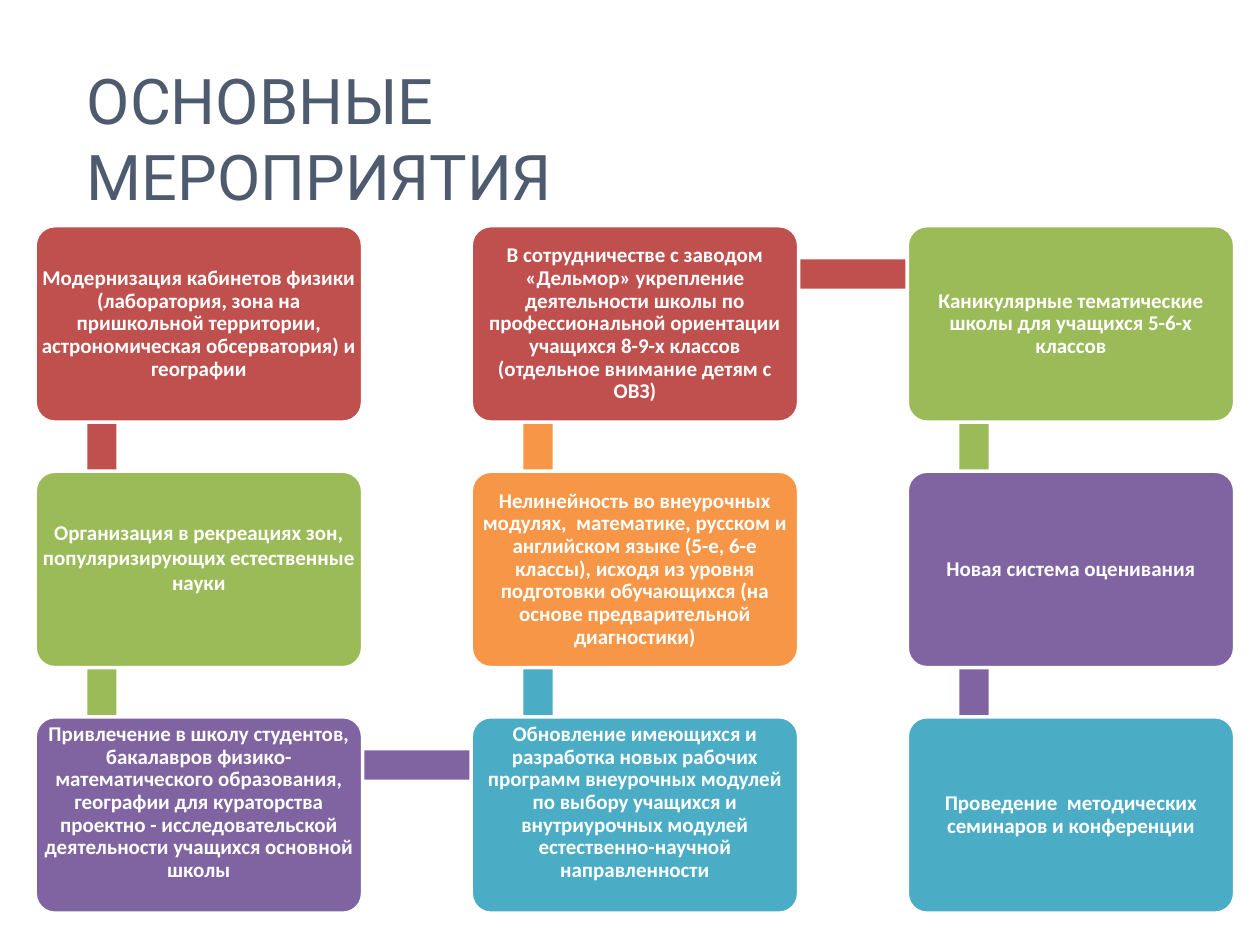
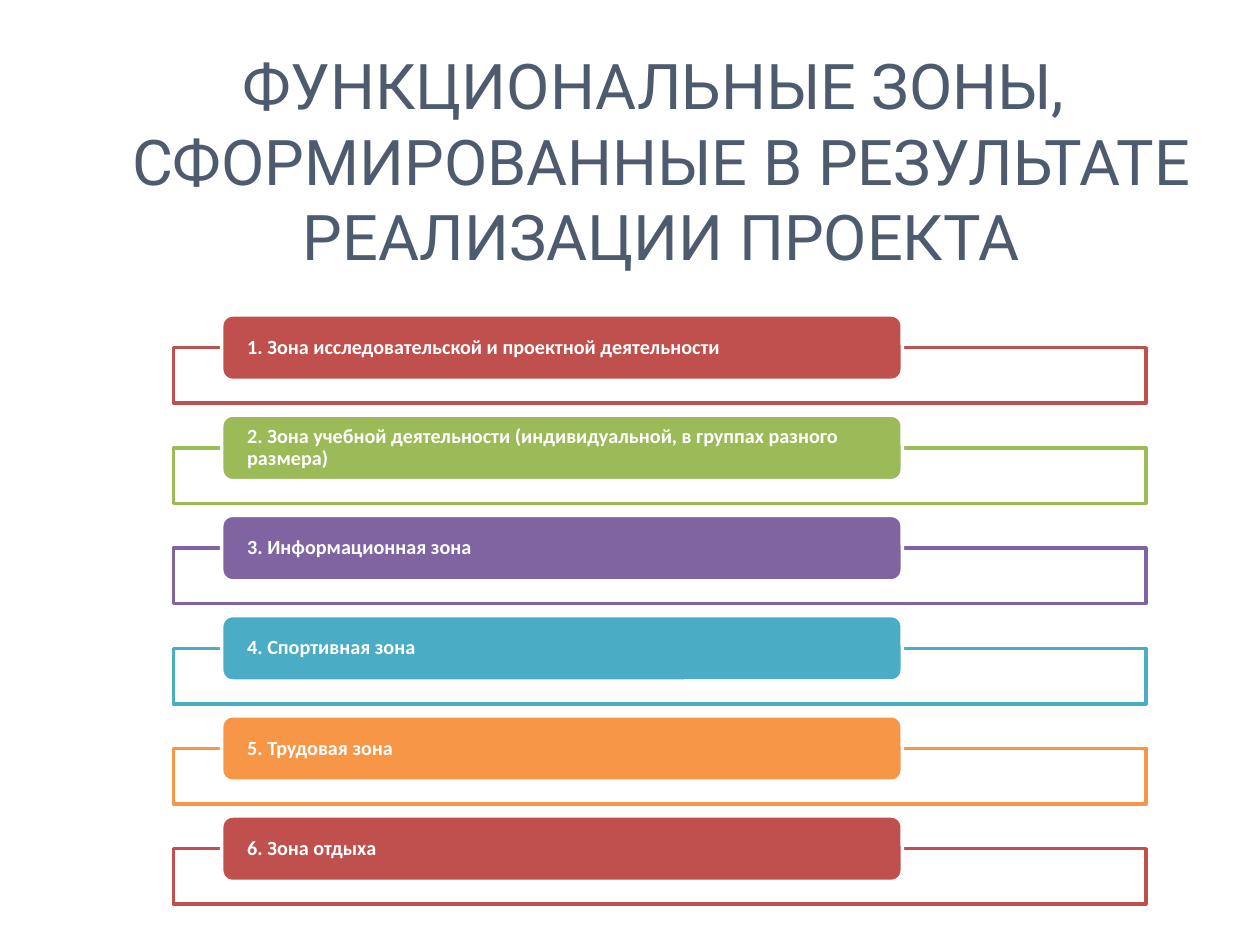
from pptx import Presentation
from pptx.dml.color import RGBColor
from pptx.enum.shapes import MSO_SHAPE
from pptx.enum.text import MSO_ANCHOR, PP_ALIGN
from pptx.util import Cm, Pt

RECTANGLE = MSO_SHAPE.RECTANGLE
ROUNDED = MSO_SHAPE.ROUNDED_RECTANGLE
LEFT, CENTER = PP_ALIGN.LEFT, PP_ALIGN.CENTER
TOP, MIDDLE = MSO_ANCHOR.TOP, MSO_ANCHOR.MIDDLE

WHITE = "FFFFFF"
ACCENTS = ["C0504D", "9BBB59", "8064A2", "4BACC6", "F79646"]
TITLE = dict(font="Roboto", size=36, color="4E5B6F", anchor=TOP)
LABEL = dict(font="Calibri", color=WHITE, bold=True, anchor=MIDDLE)


def add_block(page, kind, left, top, width, height, fill, line=None):
    block = page.shapes.add_shape(kind, Cm(left), Cm(top), Cm(width), Cm(height))
    block.shadow.inherit = False
    block.fill.solid()
    block.fill.fore_color.rgb = RGBColor.from_string(fill)
    if line:
        block.line.color.rgb = RGBColor.from_string(line)
        block.line.width = Pt(2)
    else:
        block.line.fill.background()
    return block


def write(box, text, font, size, color, anchor, align=LEFT, bold=False,
          spacing=1.0, side=0.25, above=0.13, below=0.13):
    frame = box.text_frame
    frame.word_wrap = True
    frame.vertical_anchor = anchor
    frame.margin_left = frame.margin_right = Cm(side)
    frame.margin_top, frame.margin_bottom = Cm(above), Cm(below)
    para = frame.paragraphs[0]
    para.text = text
    para.alignment = align
    para.line_spacing = spacing
    for span in para.runs:
        span.font.name = font
        span.font.size = Pt(size)
        span.font.bold = bold
        span.font.color.rgb = RGBColor.from_string(color)


deck = Presentation()
deck.slide_width, deck.slide_height = Cm(25.4), Cm(19.05)
blank = deck.slide_layouts[6]

page = deck.slides.add_slide(blank)

steps = [
    "Модернизация кабинетов физики (лаборатория, зона на пришкольной территории, "
    "астрономическая обсерватория) и географии",
    "Организация в рекреациях зон, популяризирующих естественные науки",
    "Привлечение в школу студентов, бакалавров физико-математического образования, "
    "географии для кураторства проектно - исследовательской деятельности "
    "учащихся основной школы",
    "Обновление имеющихся и разработка новых рабочих программ внеурочных модулей "
    "по выбору учащихся и внутриурочных модулей естественно-научной направленности",
    "Нелинейность во внеурочных модулях,  математике, русском и английском языке "
    "(5-е, 6-е классы), исходя из уровня подготовки обучающихся "
    "(на основе предварительной диагностики)",
    "В сотрудничестве с заводом «Дельмор» укрепление деятельности школы по "
    "профессиональной ориентации учащихся 8-9-х классов "
    "(отдельное внимание детям с ОВЗ)",
    "Каникулярные тематические школы для учащихся 5-6-х классов",
    "Новая система оценивания",
    "Проведение  методических семинаров и конференции",
]
raised_steps = (1, 2, 3)
loose_step = 1
step_width, step_height = 6.6, 3.96
column_pitch, row_pitch = 8.79, 4.95
bar_thickness = 0.59

places = []
for index in range(len(steps)):
    column, row = divmod(index, 3)
    if column == 1:
        row = 2 - row
    places.append((0.71 + column * column_pitch, 4.55 + row * row_pitch))

for index, (start, end) in enumerate(zip(places, places[1:])):
    color = ACCENTS[index % len(ACCENTS)]
    if start[0] == end[0]:
        add_block(page, RECTANGLE, start[0] + 1.05, min(start[1], end[1]) + 0.98,
                  bar_thickness, row_pitch, color)
    else:
        add_block(page, RECTANGLE, start[0] + 1.35, start[1] + 0.68,
                  column_pitch, bar_thickness, color)

for index, (text, (left, top)) in enumerate(zip(steps, places)):
    step_box = add_block(page, ROUNDED, left, top, step_width, step_height,
                         ACCENTS[index % len(ACCENTS)], WHITE)
    step_box.adjustments[0] = 0.1
    write(step_box, text, size=12, align=CENTER, side=0, above=0,
          below=0.5 if index in raised_steps else 0,
          spacing=1.0 if index == loose_step else 0.9, **LABEL)

title = page.shapes.add_textbox(Cm(1.5), Cm(1.12), Cm(16.26), Cm(3.3))
write(title, "ОСНОВНЫЕ МЕРОПРИЯТИЯ", **TITLE)

page = deck.slides.add_slide(blank)

title = page.shapes.add_textbox(Cm(1.27), Cm(0.81), Cm(24.13), Cm(4.9))
write(title, "ФУНКЦИОНАЛЬНЫЕ ЗОНЫ, \vСФОРМИРОВАННЫЕ В РЕЗУЛЬТАТЕ РЕАЛИЗАЦИИ ПРОЕКТА",
      align=CENTER, **TITLE)

zones = [
    "Зона исследовательской и проектной деятельности",
    "Зона учебной деятельности (индивидуальной, в группах разного размера)",
    "Информационная зона",
    "Спортивная зона",
    "Трудовая зона",
    "Зона отдыха",
]
zone_pitch = 2.02

for index, zone in enumerate(zones):
    color = ACCENTS[index % len(ACCENTS)]
    top = 6.35 + index * zone_pitch
    add_block(page, RECTANGLE, 3.5, top + 0.66, 19.6, 1.12, WHITE, color)
    zone_box = add_block(page, ROUNDED, 4.47, top, 13.72, 1.32, color, WHITE)
    write(zone_box, f"{index + 1}. {zone}", size=11.5, spacing=0.9,
          side=0.45, above=0, below=0, **LABEL)

deck.save("out.pptx")
